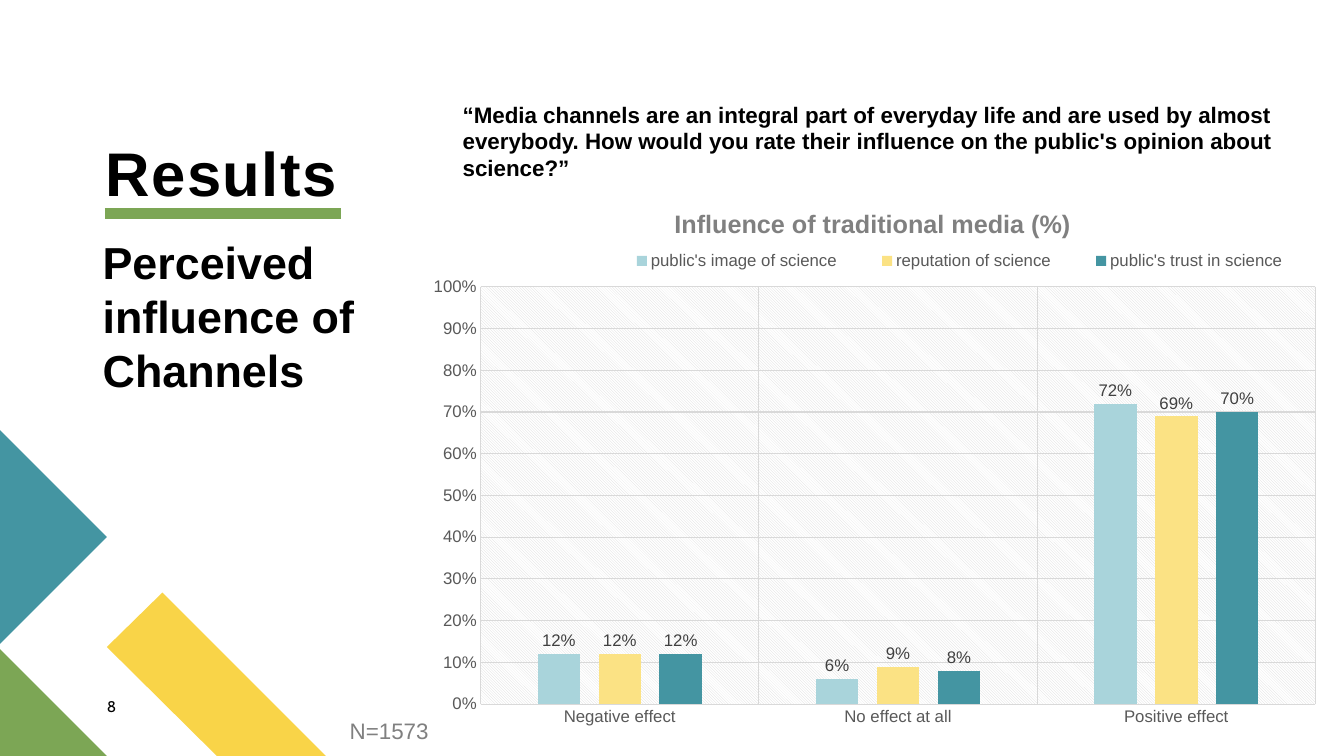
from lxml.etree import SubElement
from pptx import Presentation
from pptx.chart.data import CategoryChartData
from pptx.dml.color import RGBColor
from pptx.enum.chart import XL_CHART_TYPE, XL_LABEL_POSITION, XL_LEGEND_POSITION, XL_TICK_MARK
from pptx.enum.shapes import MSO_CONNECTOR
from pptx.enum.text import MSO_ANCHOR, MSO_AUTO_SIZE, PP_ALIGN
from pptx.oxml import parse_xml
from pptx.oxml.ns import nsdecls, qn
from pptx.util import Inches, Pt

TEAL, GREEN, YELLOW = "4495A2", "7CA655", "F9D448"
GRID, GREY, BLACK = "D9D9D9", "808080", "000000"


def rgb(value):
    return RGBColor.from_string(value)


def style(font, size, color, bold=False, name="Arial"):
    font.name = name
    font.size = Pt(size)
    font.bold = bold
    font.color.rgb = rgb(color)


def place(sp, box):
    sp.left, sp.top, sp.width, sp.height = (Inches(v) for v in box)


def add_text(s, box, text, size, color=BLACK, bold=False, name="Arial", inset=True):
    sp = s.shapes.add_textbox(*(Inches(v) for v in box))
    tf = sp.text_frame
    tf.word_wrap = True
    if not inset:
        tf.margin_left = tf.margin_right = tf.margin_top = tf.margin_bottom = 0
    r = tf.paragraphs[0].add_run()
    r.text = text
    style(r.font, size, color, bold, name)


def add_polygon(s, points, color):
    points = [(Inches(x), Inches(y)) for x, y in points]
    builder = s.shapes.build_freeform(*points[0])
    builder.add_line_segments(points[1:], close=True)
    sp = builder.convert_to_shape()
    sp.shadow.inherit = False
    sp.fill.solid()
    sp.fill.fore_color.rgb = rgb(color)
    sp.line.fill.background()


def add_corner(s, left, bottom, unit):
    def at(*steps):
        return [(left + x * unit, bottom - y * unit) for x, y in steps]

    add_polygon(s, at((3.05, 0), (2.03, 0), (1, 1.02), (1.52, 1.53)), YELLOW)
    add_polygon(s, at((0, 0), (1, 0), (0, 1)), GREEN)
    add_polygon(s, at((0, 1.05), (1, 2.05), (0, 3.05)), TEAL)


def add_title(s, box, text):
    left, top, width, height = box
    y = Inches(top + height + 0.04)
    cn = s.shapes.add_connector(MSO_CONNECTOR.STRAIGHT, Inches(left - 0.01), y, Inches(left + 2.33), y)
    cn.line.color.rgb = rgb(GREEN)
    cn.line.width = Pt(8)
    SubElement(cn._element.spPr, qn("a:effectLst"))

    sp = s.shapes.title
    place(sp, box)
    tf = sp.text_frame
    tf.auto_size = MSO_AUTO_SIZE.NONE
    tf.vertical_anchor = MSO_ANCHOR.BOTTOM
    tf.margin_left = tf.margin_right = tf.margin_top = tf.margin_bottom = 0
    p = tf.paragraphs[0]
    p.alignment = PP_ALIGN.LEFT
    p.line_spacing = 0.9
    r = p.add_run()
    r.text = text
    style(r.font, 44, BLACK, True)
    r._r.get_or_add_rPr().set("spc", "100")


def set_layout(parent, index, inner=False, **fractions):
    for old in parent.findall(qn("c:layout")):
        parent.remove(old)
    layout = parse_xml(f"<c:layout {nsdecls('c')}><c:manualLayout/></c:layout>")
    manual = layout[0]
    if inner:
        SubElement(manual, qn("c:layoutTarget"), val="inner")
    for key in ("x", "y"):
        SubElement(manual, qn(f"c:{key}Mode"), val="edge")
    for key, value in fractions.items():
        SubElement(manual, qn(f"c:{key}"), val=str(value))
    parent.insert(index, layout)


def format_axis(axis):
    axis.major_tick_mark = axis.minor_tick_mark = XL_TICK_MARK.NONE
    axis.has_major_gridlines = True
    for line in (axis.major_gridlines.format.line, axis.format.line):
        line.color.rgb = rgb(GRID)
        line.width = Pt(0.75)
    style(axis.tick_labels.font, 12, "595959")


def add_media_chart(s, box):
    data = CategoryChartData(number_format="0%")
    data.categories = ["Negative effect", "No effect at all", "Positive effect"]
    data.add_series("public's image of science", (0.12, 0.06, 0.72))
    data.add_series("reputation of science", (0.12, 0.09, 0.69))
    data.add_series("public's trust in science", (0.12, 0.08, 0.7))
    chart = s.shapes.add_chart(XL_CHART_TYPE.COLUMN_CLUSTERED, *(Inches(v) for v in box), data).chart
    chart.font.name = "Arial"
    chart.font.size = Pt(10)

    chart.has_title = True
    r = chart.chart_title.text_frame.paragraphs[0].add_run()
    r.text = "Influence of traditional media (%)"
    style(r.font, 18, GREY, True)
    set_layout(chart.chart_title._element, 1, x=0.27, y=0.03)

    chart.has_legend = True
    legend = chart.legend
    legend.position = XL_LEGEND_POSITION.BOTTOM
    legend.include_in_layout = False
    style(legend.font, 12, "595959")
    set_layout(legend._element, 1, x=0.19, y=0.11, w=0.8, h=0.05)

    format_axis(chart.category_axis)
    axis = chart.value_axis
    format_axis(axis)
    axis.format.line.fill.background()
    axis.minimum_scale, axis.maximum_scale, axis.major_unit = 0, 1, 0.1
    axis.tick_labels.number_format = "0%"
    axis.tick_labels.number_format_is_linked = False

    plot = chart.plots[0]
    plot.gap_width, plot.overlap = 267, -43
    plot.vary_by_categories = False
    for series, color in zip(plot.series, ("A9D4DB", "FBE284", TEAL)):
        series.format.fill.solid()
        series.format.fill.fore_color.rgb = rgb(color)
        labels = series.data_labels
        labels.show_value = True
        labels.position = XL_LABEL_POSITION.OUTSIDE_END
        labels.number_format = "0%"
        labels.number_format_is_linked = False
        style(labels.font, 12, "404040")

    area = chart._chartSpace.chart.plotArea
    set_layout(area, 0, True, x=0.061, y=0.182, w=0.922, h=0.757)
    area.append(parse_xml(
        f'<c:spPr {nsdecls("c", "a")}><a:pattFill prst="ltDnDiag">'
        f'<a:fgClr><a:srgbClr val="{GRID}"/></a:fgClr>'
        '<a:bgClr><a:srgbClr val="FFFFFF"/></a:bgClr>'
        '</a:pattFill><a:ln><a:noFill/></a:ln></c:spPr>'))


def main():
    prs = Presentation()
    prs.slide_width, prs.slide_height = Inches(13.33), Inches(7.5)
    s = prs.slides.add_slide(prs.slide_layouts[5])
    add_corner(s, 0, 7.5, 1.06)
    add_text(s, (1.06, 6.92, 0.57, 0.27), "8", 11, name="Cabin", inset=False)
    add_title(s, (1.05, 1.41, 5.4, 0.67), "Results")
    add_text(s, (0.92, 2.28, 3.04, 1.72), "Perceived influence of Channels", 32, bold=True)
    add_text(s, (4.49, 0.95, 8.44, 0.91),
             "“Media channels are an integral part of everyday life and are used by almost everybody. "
             "How would you rate their influence on the public's opinion about science?”", 16, bold=True)
    add_media_chart(s, (4.22, 1.85, 8.98, 5.47))
    add_text(s, (3.37, 7.07, 1.18, 0.37), "N=1573", 16, GREY)
    prs.save("out.pptx")


if __name__ == "__main__":
    main()
